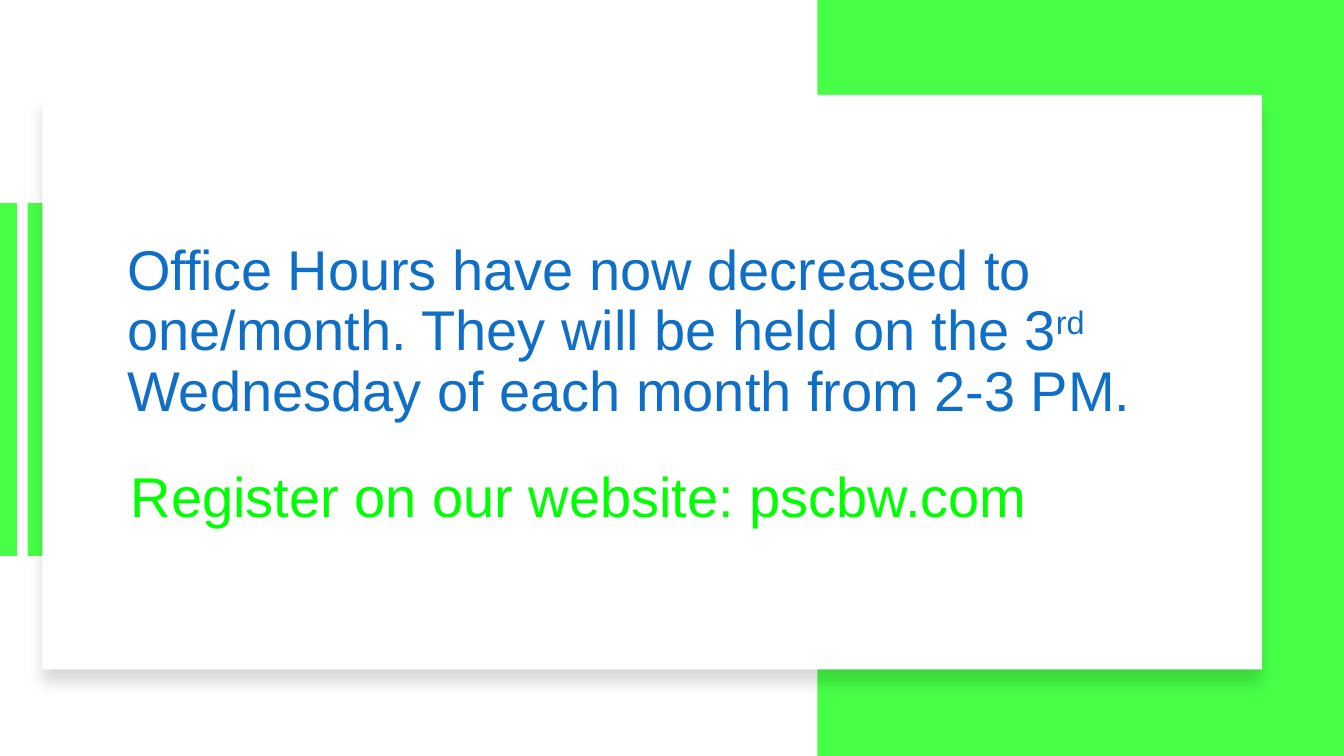
from dataclasses import dataclass

import lxml.etree
import pptx
import pptx.dml.color
import pptx.enum.shapes
import pptx.enum.text
import pptx.oxml.ns
import pptx.util
from pptx.util import Cm


@dataclass(frozen=True)
class Theme:
    green: str = "47FF47"
    white: str = "FFFFFF"
    title: str = "0F6FC6"
    invitation: str = "00FF00"
    shadow: str = "000000"
    font: str = "Arial"
    text_size: int = 40


@dataclass(frozen=True)
class Block:
    """A filled rectangle, measured in centimetres."""
    left: float
    top: float
    width: float
    height: float
    colour: str


THEME = Theme()
SLIDE_WIDTH, SLIDE_HEIGHT = 33.87, 19.05
PANEL_LEFT = 20.6
STRIPES = [Block(left, 5.12, 0.43, 8.89, THEME.green) for left in (0, 0.7)]
PANEL = Block(PANEL_LEFT, 0, SLIDE_WIDTH - PANEL_LEFT, SLIDE_HEIGHT, THEME.green)
CARD = Block(1.07, 2.39, 30.73, 14.48, THEME.white)


def rgb(colour: str) -> pptx.dml.color.RGBColor:
    return pptx.dml.color.RGBColor.from_string(colour)


def draw_block(page, block: Block):
    shape = page.shapes.add_shape(
        pptx.enum.shapes.MSO_SHAPE.RECTANGLE,
        Cm(block.left), Cm(block.top), Cm(block.width), Cm(block.height))
    shape.shadow.inherit = False
    shape.fill.solid()
    shape.fill.fore_color.rgb = rgb(block.colour)
    shape.line.fill.background()
    return shape


def add_shadow(shape) -> None:
    """Cast a soft shadow straight down."""
    qn = pptx.oxml.ns.qn
    effects = shape.element.spPr.find(qn("a:effectLst"))
    shadow = lxml.etree.SubElement(
        effects, qn("a:outerShdw"), blurRad=str(pptx.util.Pt(11)),
        dist=str(pptx.util.Pt(10)), dir="5400000", algn="t", rotWithShape="0")
    colour = lxml.etree.SubElement(shadow, qn("a:srgbClr"), val=THEME.shadow)
    lxml.etree.SubElement(colour, qn("a:alpha"), val="15000")


def format_paragraph(para, colour: str) -> None:
    para.alignment = pptx.enum.text.PP_ALIGN.LEFT
    para.font.name = THEME.font
    para.font.size = pptx.util.Pt(THEME.text_size)
    para.font.color.rgb = rgb(colour)


def write_title(page) -> None:
    title = page.shapes.title
    title.left, title.top = Cm(2.95), Cm(5.92)
    title.width, title.height = Cm(27.53), Cm(4.93)
    frame = title.text_frame
    frame.word_wrap = True
    frame.auto_size = pptx.enum.text.MSO_AUTO_SIZE.NONE
    frame.vertical_anchor = pptx.enum.text.MSO_ANCHOR.MIDDLE
    para = frame.paragraphs[0]
    para.line_spacing = 0.9
    format_paragraph(para, THEME.title)
    para.add_run().text = ("Office Hours have now decreased to one/month. "
                           "They will be held on the 3")
    ordinal = para.add_run()
    ordinal.text = "rd"
    ordinal.font._element.set("baseline", "30000")
    para.add_run().text = " Wednesday of each month from 2-3 PM."
    # Bring the title in front of the card
    title.element.getparent().append(title.element)


def write_invitation(page) -> None:
    box = page.shapes.add_textbox(Cm(3.05), Cm(11.51), Cm(23.72), Cm(1.96))
    frame = box.text_frame
    frame.word_wrap = True
    frame.auto_size = pptx.enum.text.MSO_AUTO_SIZE.SHAPE_TO_FIT_TEXT
    para = frame.paragraphs[0]
    para.add_run().text = "Register on our website: pscbw.com"
    format_paragraph(para, THEME.invitation)


def main() -> None:
    deck = pptx.Presentation()
    deck.slide_width, deck.slide_height = Cm(SLIDE_WIDTH), Cm(SLIDE_HEIGHT)
    page = deck.slides.add_slide(deck.slide_layouts.get_by_name("Title Only"))

    # Green decoration behind the white card
    for block in (*STRIPES, PANEL):
        draw_block(page, block)
    add_shadow(draw_block(page, CARD))

    # Announcement
    write_title(page)
    write_invitation(page)
    deck.save("out.pptx")


if __name__ == "__main__":
    main()
